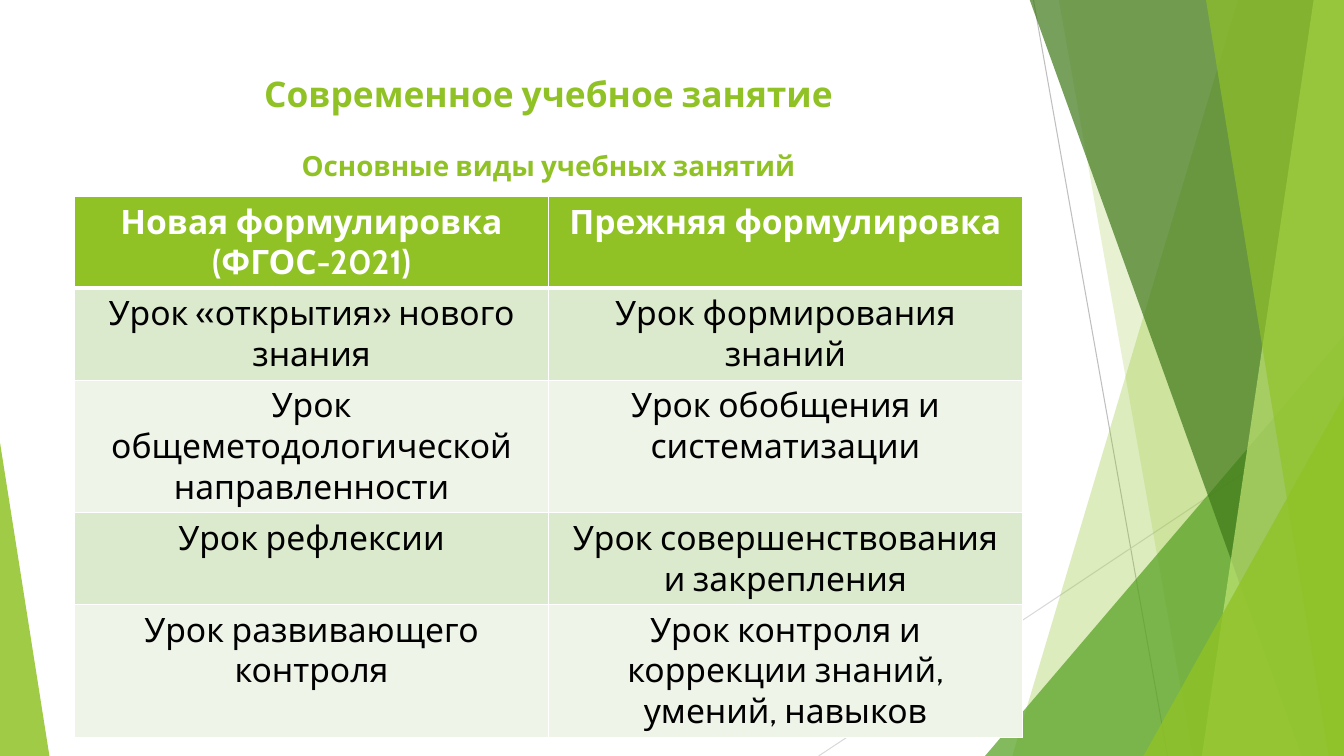
"""Build a slide that compares new and former names of lesson types."""
from lxml import etree
from pptx import Presentation
from pptx.dml.color import RGBColor
from pptx.enum.shapes import MSO_CONNECTOR, MSO_SHAPE
from pptx.enum.text import MSO_ANCHOR, MSO_AUTO_SIZE, PP_ALIGN
from pptx.oxml.ns import qn
from pptx.util import Inches, Pt

CENTER = PP_ALIGN.CENTER
TOP = MSO_ANCHOR.TOP
NO_FIT = MSO_AUTO_SIZE.NONE
STRAIGHT = MSO_CONNECTOR.STRAIGHT
TRIANGLE = MSO_SHAPE.ISOSCELES_TRIANGLE

WHITE = RGBColor(0xFF, 0xFF, 0xFF)
BLACK = RGBColor(0, 0, 0)
GREEN = RGBColor(0x90, 0xC2, 0x26)
GRASS = RGBColor(0x54, 0xA0, 0x21)
FOREST = RGBColor(0x3F, 0x78, 0x19)
LIME = RGBColor(0xC0, 0xE4, 0x74)
BAND = RGBColor(0xDB, 0xE9, 0xCD)
PALE = RGBColor(0xEE, 0xF4, 0xE8)
GRAY = RGBColor(0xBF, 0xBF, 0xBF)
SILVER = RGBColor(0xD9, 0xD9, 0xD9)

WIDTH, HEIGHT = 13.33, 7.5
LEFT, SPAN = 0.74, 9.4

HEADING = [("Современное учебное занятие", 25.2, 0),
           ("Основные виды учебных занятий", 19.8, 24)]
LESSONS = [
    ("Новая формулировка (ФГОС-2021)", "Прежняя формулировка"),
    ("Урок «открытия» нового знания", "Урок формирования знаний"),
    ("Урок общеметодологической направленности",
     "Урок обобщения и систематизации"),
    ("Урок рефлексии", "Урок совершенствования и закрепления"),
    ("Урок развивающего контроля",
     "Урок контроля и коррекции знаний, умений, навыков"),
]


class Deck:
    """Hold the font and the current slide, and add its elements."""

    def __init__(self, font):
        self.font = font
        self.show = Presentation()
        self.show.slide_width = Inches(WIDTH)
        self.show.slide_height = Inches(HEIGHT)
        self.slide = self.show.slides.add_slide(self.show.slide_layouts[5])
        self.shapes = self.slide.shapes

    def style(self, para, size, color, bold):
        """Format one centred paragraph."""
        para.alignment = CENTER
        para.font.name = self.font
        para.font.size = Pt(size)
        para.font.color.rgb = color
        para.font.bold = bold

    def paint(self, shape, color, alpha):
        """Fill a shape with a see-through colour and drop its outline."""
        shape.shadow.inherit = False
        shape.line.fill.background()
        shape.fill.solid()
        shape.fill.fore_color.rgb = color
        tone = shape.fill._xPr.find(qn("a:solidFill"))[0]
        etree.SubElement(tone, qn("a:alpha"), val=str(alpha * 1000))

    def line(self, start, end, color):
        """Add a thin straight line."""
        ends = [Inches(value) for value in (*start, *end)]
        line = self.shapes.add_connector(STRAIGHT, *ends)
        line.line.color.rgb = color
        line.line.width = Pt(0.75)
        etree.SubElement(line._element.spPr, qn("a:effectLst"))

    def shard(self, top, base, color, alpha):
        """Add a full-height panel from a slanted edge to the right side."""
        rise = Inches(-0.01)
        right, floor = Inches(WIDTH), Inches(HEIGHT)
        pen = self.shapes.build_freeform(Inches(top), rise)
        pen.add_line_segments(
            [(right, rise), (right, floor), (Inches(base), floor)])
        self.paint(pen.convert_to_shape(), color, alpha)

    def wedge(self, left, top, width, tip, color, alpha):
        """Add a right triangle that stands on the bottom edge."""
        box = [Inches(value) for value in (left, top, width, HEIGHT - top)]
        shape = self.shapes.add_shape(TRIANGLE, *box)
        shape.adjustments[0] = tip
        self.paint(shape, color, alpha)

    def title(self, rows):
        """Place and fill the title."""
        title = self.shapes.title
        title.left, title.top = Inches(LEFT), Inches(0.67)
        title.width, title.height = Inches(SPAN), Inches(1.28)
        frame = title.text_frame
        frame.word_wrap = True
        frame.auto_size = NO_FIT
        frame.vertical_anchor = TOP
        frame.text = "\n".join(row[0] for row in rows)
        for para, (_, size, gap) in zip(frame.paragraphs, rows):
            self.style(para, size, GREEN, True)
            para.space_before = Pt(gap)

    def border(self, cell, row):
        """Draw white cell borders with a thick rule below the header."""
        props = cell._tc.get_or_add_tcPr()
        thick = {(0, "B"), (1, "T")}
        for side in "LRTB":
            width = Pt(3 if (row, side) in thick else 1)
            edge = etree.SubElement(props, qn("a:ln" + side), w=str(width))
            fill = etree.SubElement(edge, qn("a:solidFill"))
            etree.SubElement(fill, qn("a:srgbClr"), val=str(WHITE))

    def table(self, rows):
        """Add the table of lesson types."""
        frame = self.shapes.add_table(
            len(rows), len(rows[0]), Inches(LEFT), Inches(1.95),
            Inches(SPAN), Inches(4.9))
        grid = frame.table
        for r, texts in enumerate(rows):
            grid.rows[r].height = Inches(0.41)
            head = r == 0
            for c, text in enumerate(texts):
                cell = grid.cell(r, c)
                cell.text = text
                self.style(cell.text_frame.paragraphs[0], 24,
                           WHITE if head else BLACK, head)
                self.border(cell, r)
                cell.fill.solid()
                cell.fill.fore_color.rgb = (
                    GREEN if head else BAND if r % 2 else PALE)
        frame.height = Inches(4.9)


def main():
    """Compose the slide and save it."""
    deck = Deck("Cabin")
    deck.line((10.25, 0), (11.58, HEIGHT), GRAY)
    deck.line((WIDTH, 4.03), (8.12, HEIGHT), SILVER)
    deck.shard(12.28, 10.04, GREEN, 30)
    deck.shard(10.5, 11.83, GREEN, 20)
    deck.wedge(9.77, 3.33, 3.56, 1, GRASS, 72)
    deck.shard(10.21, 12.91, FOREST, 70)
    deck.shard(13.03, 11.92, LIME, 70)
    deck.shard(11.96, 13.18, GREEN, 65)
    deck.wedge(11.34, 3.93, 1.99, 1, GREEN, 80)
    deck.wedge(0, 4.39, 0.49, 0, GREEN, 85)
    deck.title(HEADING)
    deck.table(LESSONS)
    deck.show.save("out.pptx")


if __name__ == "__main__":
    main()
